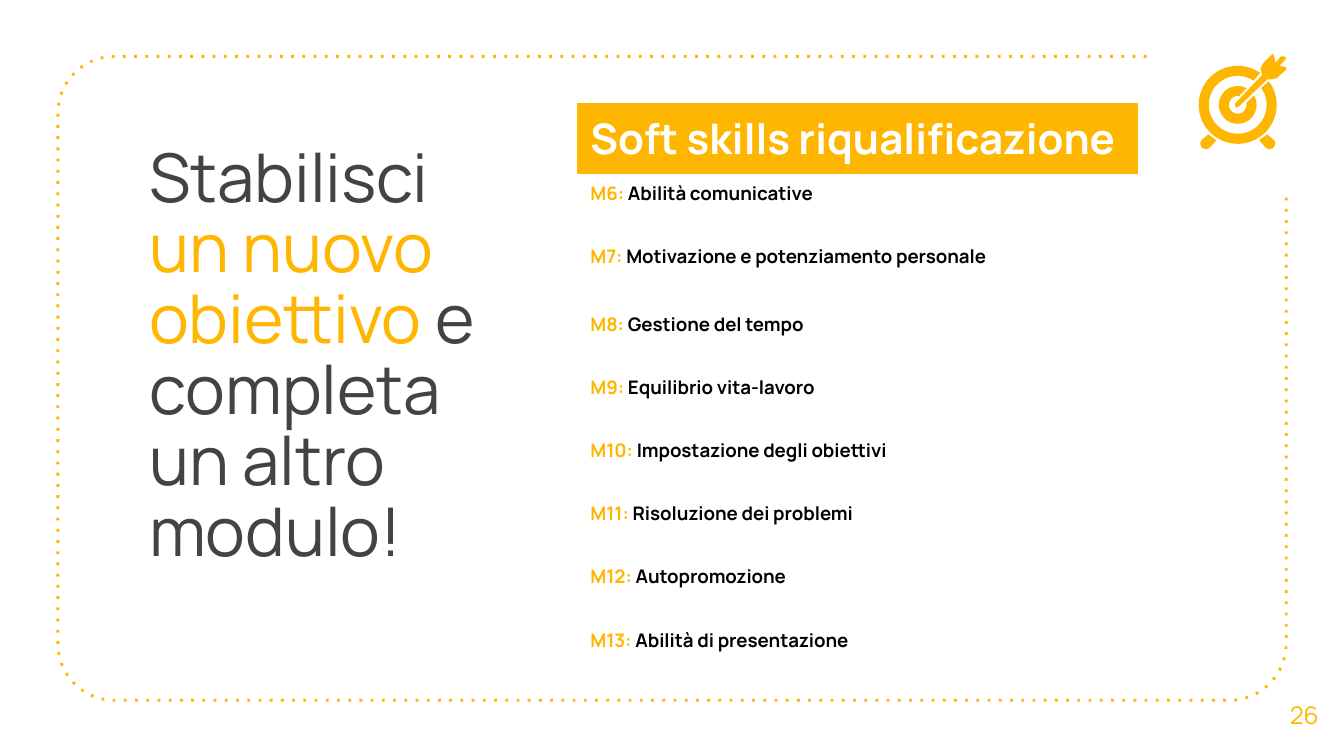
from dataclasses import dataclass
from math import cos, radians, sin
from typing import NamedTuple

from pptx import Presentation
from pptx.dml.color import RGBColor as Color
from pptx.enum.dml import MSO_LINE as Dash
from pptx.enum.text import MSO_ANCHOR as Anchor, MSO_AUTO_SIZE as Fit, PP_ALIGN as Align
from pptx.util import Pt


@dataclass(frozen=True)
class Theme:
    font: str = "Manrope"
    gold: Color = Color(0xFF, 0xB6, 0x00)
    grey: Color = Color(0x43, 0x43, 0x43)
    black: Color = Color(0, 0, 0)
    white: Color = Color(0xFF, 0xFF, 0xFF)
    title: float = 36
    head: float = 22.5
    row: float = 10
    page: float = 13


class Point(NamedTuple):
    x: float
    y: float


class Part(NamedTuple):
    text: str
    color: Color


class Unit(NamedTuple):
    code: str
    name: str
    height: float


class Ring(NamedTuple):
    outer: float
    inner: float
    wide: float  # half gap on the outer edge, in degrees
    narrow: float  # half gap on the inner edge


THEME = Theme()
HUB = Point(663.1, 56.2)
TILT = -46
RINGS = [Ring(20.9, 15.5, 9, 10.5), Ring(10.1, 4.7, 16, 35)]
FOOT = [(-15.8, 15.8), (-19.5, 18.9), (-20.1, 20.3), (-19.9, 21.9),
        (-18.6, 23.4), (-16.6, 23.7), (-15.1, 23), (-11.5, 18.9)]
ARROW = [(18.7, -27.4), (18, -26.7), (13.7, -22.4), (12.9, -20.9),
         (12.3, -19.5), (13, -15.9), (-1.4, -0.8), (-1.4, 0.7),
         (-0.7, 1.4), (0.7, 0.8), (15.9, -13.7), (18.7, -13.7),
         (20.9, -14.3), (25.9, -18.8), (25.9, -20.2), (22.3, -20.9),
         (25.2, -23.8), (25.9, -25.2), (24.5, -26), (23.1, -26),
         (20.2, -22.4), (19.5, -26)]
TITLE = [Part("Stabilisci ", THEME.grey),
         Part("un nuovo obiettivo", THEME.gold),
         Part(" e completa un altro modulo!", THEME.grey)]
HEAD = "Soft skills riqualificazione"
UNITS = [
    Unit("M6", "Abilità comunicative", 33.9),
    Unit("M7", "Motivazione e potenziamento personale", 36),
    Unit("M8", "Gestione del tempo", 33.9),
    Unit("M9", "Equilibrio vita-lavoro", 33.9),
    Unit("M10", "Impostazione degli obiettivi", 33.9),
    Unit("M11", "Risoluzione dei problemi", 33.9),
    Unit("M12", "Autopromozione", 33.9),
    Unit("M13", "Abilità di presentazione", 33.9),
]


def arc(mid: Point, size: float, start: float, end: float, steps: int = 16) -> list[Point]:
    turns = [radians(start + (end - start) * i / steps) for i in range(steps + 1)]
    return [Point(mid.x + size * cos(t), mid.y + size * sin(t)) for t in turns]


def trace(shapes, points: list[Point], close: bool = True):
    """Draw an outline through the points, without a shadow."""
    first, *rest = [(Pt(x), Pt(y)) for x, y in points]
    pen = shapes.build_freeform(*first)
    pen.add_line_segments(rest, close=close)
    shape = pen.convert_to_shape()
    shape.shadow.inherit = False
    return shape


def draw_frame(shapes) -> None:
    left, top, right, base, bend = 31, 30.2, 689, 375.2, 30.4
    points = [Point(614.2, top),
              *arc(Point(left + bend, top + bend), bend, 270, 180),
              *arc(Point(left + bend, base - bend), bend, 180, 90),
              *arc(Point(right - bend, base - bend), bend, 90, 0),
              Point(right, 105.1)]
    frame = trace(shapes, points, close=False)
    frame.fill.background()
    line = frame.line
    line.color.rgb = THEME.gold
    line.width = Pt(1.5)
    line.dash_style = Dash.ROUND_DOT
    for dash in frame.element.xpath(".//a:prstDash"):
        dash.set("val", "dot")


def draw_target(shapes) -> None:
    paths = []
    for ring in RINGS:
        wide, narrow = ring.wide, ring.narrow
        paths.append(
            arc(HUB, ring.outer, TILT + wide, TILT + 360 - wide, 60)
            + arc(HUB, ring.inner, TILT + 360 - narrow, TILT + narrow, 60))
    for side in (1, -1):
        paths.append([Point(HUB.x + side * x, HUB.y + y) for x, y in FOOT])
    paths.append([Point(HUB.x + x, HUB.y + y) for x, y in ARROW])
    group = shapes.add_group_shape()
    for path in paths:
        piece = trace(group.shapes, path)
        piece.fill.solid()
        piece.fill.fore_color.rgb = THEME.gold
        piece.line.fill.background()


def place(shape, left: float, top: float, width: float, height: float) -> None:
    shape.left, shape.top = Pt(left), Pt(top)
    shape.width, shape.height = Pt(width), Pt(height)


def write(frame, parts: list[Part], size: float, bold: bool = False,
          align: Align = Align.LEFT) -> None:
    para = frame.paragraphs[0]
    para.alignment = align
    for part in parts:
        run = para.add_run()
        run.text = part.text
        font = run.font
        font.name, font.size, font.bold = THEME.font, Pt(size), bold
        font.color.rgb = part.color


def set_box(frame, anchor: Anchor) -> None:
    frame.word_wrap = True
    frame.auto_size = Fit.NONE
    frame.vertical_anchor = anchor
    frame.margin_left = frame.margin_right = Pt(7.2)
    frame.margin_top = frame.margin_bottom = Pt(7.2)


def draw_title(title) -> None:
    place(title, 72.7, 70.6, 213.8, 67.7)
    set_box(title.text_frame, Anchor.TOP)
    write(title.text_frame, TITLE, THEME.title)
    title.text_frame.paragraphs[0].line_spacing = 0.88


def draw_page(shapes) -> None:
    box = shapes.add_textbox(Pt(677.5), Pt(361.4), Pt(42.5), Pt(43.2))
    set_box(box.text_frame, Anchor.MIDDLE)
    write(box.text_frame, [Part("26", THEME.gold)], THEME.page, align=Align.CENTER)


def draw_table(shapes) -> None:
    sizes = [38, *(unit.height for unit in UNITS)]
    table = shapes.add_table(len(sizes), 1, Pt(309.1), Pt(55.3),
                             Pt(300.7), Pt(sum(sizes))).table
    table.first_row = table.horz_banding = False
    for style in table._tbl.xpath(".//a:tableStyleId"):
        style.text = "{2D5ABB26-0587-4C30-8999-92F81FD0307C}"
    for row, size in zip(table.rows, sizes):
        row.height = Pt(size)
    head, *cells = [row.cells[0] for row in table.rows]
    head.fill.solid()
    head.fill.fore_color.rgb = THEME.gold
    write(head.text_frame, [Part(HEAD, THEME.white)], THEME.head, bold=True)
    for cell, unit in zip(cells, UNITS):
        cell.fill.background()
        parts = [Part(f"{unit.code}: ", THEME.gold), Part(unit.name, THEME.black)]
        write(cell.text_frame, parts, THEME.row, bold=True)


def main() -> None:
    deck = Presentation()
    deck.slide_width, deck.slide_height = Pt(720), Pt(405)
    slide = deck.slides.add_slide(deck.slide_layouts[5])
    shapes = slide.shapes
    draw_frame(shapes)
    draw_title(shapes.title)
    draw_page(shapes)
    draw_target(shapes)
    draw_table(shapes)
    deck.save("out.pptx")


if __name__ == "__main__":
    main()
